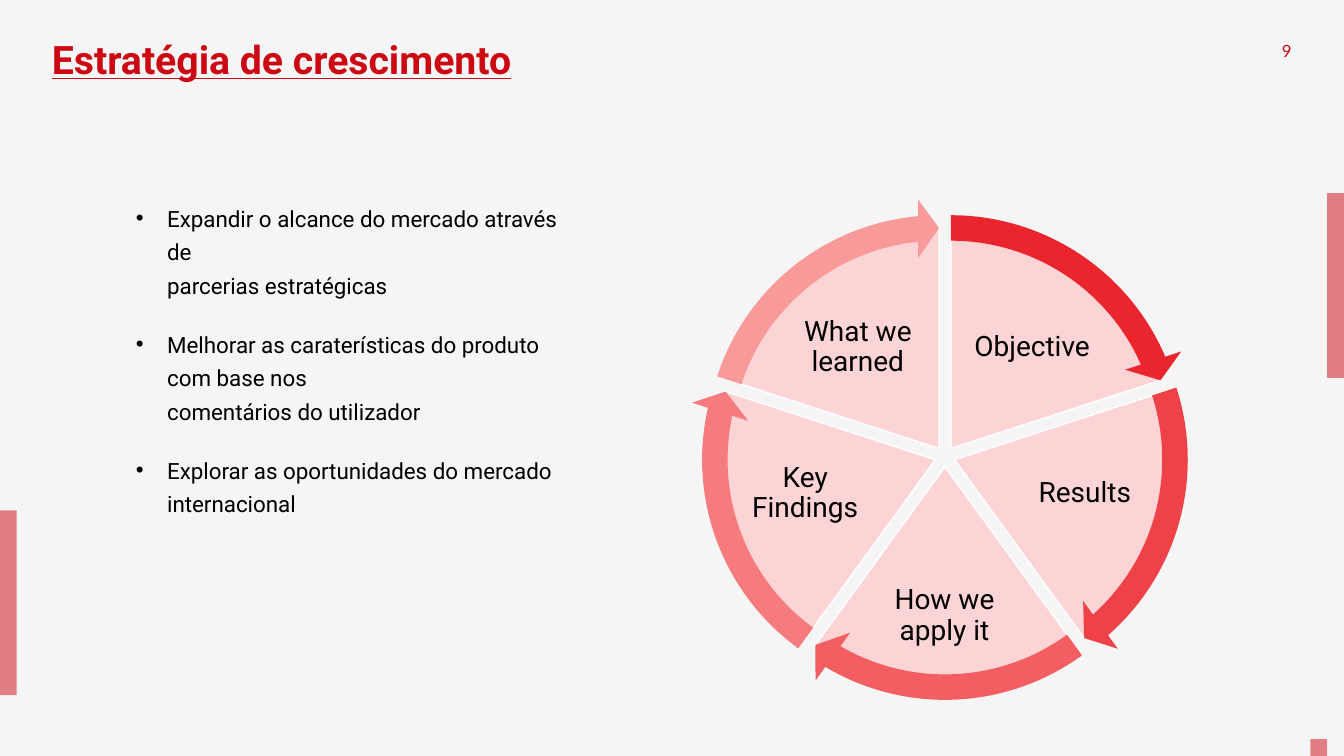
from math import cos, radians, sin

from lxml.etree import SubElement
from pptx import Presentation
from pptx.dml.color import RGBColor
from pptx.enum.shapes import MSO_SHAPE
from pptx.enum.text import MSO_ANCHOR, PP_ALIGN
from pptx.oxml.ns import qn
from pptx.util import Inches, Pt

RED = RGBColor(0xCC, 0x09, 0x12)
BLACK = RGBColor(0, 0, 0)
WHITE = RGBColor(0xFF, 0xFF, 0xFF)
PAPER = RGBColor(0xF5, 0xF5, 0xF5)
PINK = RGBColor(0xFD, 0xD4, 0xD6)

COLUMNS, ROWS = 160, 90
BARS = [(158, 23, 2, 22), (0, 60.75, 2, 22), (156, 88, 2, 2)]
BULLETS = [
    "Expandir o alcance do mercado através de \nparcerias estratégicas",
    "Melhorar as caraterísticas do produto com base nos \ncomentários do utilizador",
    "Explorar as oportunidades do mercado internacional",
]

# Cycle steps, clockwise from the top: label, label box, arrow colour
STEPS = [
    ("Objective", (114.35, 35.75, 17.05, 11.3), RGBColor(0xEA, 0x25, 0x2E)),
    ("Results", (121.3, 52.45, 15.7, 12.6), RGBColor(0xEE, 0x41, 0x48)),
    ("How we apply it", (104.9, 66.35, 15.1, 13.95), RGBColor(0xF2, 0x5E, 0x62)),
    ("Key Findings", (88, 52.45, 15.7, 12.6), RGBColor(0xF5, 0x7B, 0x7E)),
    ("What we learned", (93.6, 35.75, 17.05, 11.3), RGBColor(0xF8, 0x99, 0x9A)),
]
CENTRE = (112.5, 54.36)
PIE_SIZE, ARROW_SIZE, SPREAD = 52.92, 59.52, 1.2
STEP_ANGLE = 360 / len(STEPS)
ARROW_SWEEP = 66.54


def angle_adjustment(degrees):
    """Convert degrees to the adjustment unit, 100000 sixty-thousandths."""
    return degrees % 360 * 0.6


class SlideBuilder:
    """Draws on one slide; boxes are (column, row, columns, rows)."""

    def __init__(self, presentation):
        self.column = presentation.slide_width / COLUMNS
        self.row = presentation.slide_height / ROWS
        self.slide = presentation.slides.add_slide(presentation.slide_layouts[6])
        self.slide.background.fill.solid()
        self.slide.background.fill.fore_color.rgb = PAPER

    def place(self, box):
        left, top, width, height = box
        return (round(left * self.column), round(top * self.row),
                round(width * self.column), round(height * self.row))

    def shape(self, kind, box, color, line=None, adjustments=(), opacity=None):
        shape = self.slide.shapes.add_shape(kind, *self.place(box))
        shape.shadow.inherit = False
        for index, value in enumerate(adjustments):
            shape.adjustments[index] = value
        shape.fill.solid()
        shape.fill.fore_color.rgb = color
        if line is None:
            shape.line.fill.background()
        else:
            shape.line.color.rgb = line
            shape.line.width = Pt(1)
        if opacity is not None:
            color_element = shape.fill._xPr.find(".//" + qn("a:srgbClr"))
            SubElement(color_element, qn("a:alpha"), val=str(opacity * 1000))

    def text(self, box, lines, size, color=BLACK, font="Roboto", heading=False,
             align=PP_ALIGN.LEFT, anchor=MSO_ANCHOR.TOP, spacing=1.0, after=0,
             insets=(0.1, 0.05, 0.1, 0.05)):
        text_frame = self.slide.shapes.add_textbox(*self.place(box)).text_frame
        text_frame.word_wrap = True
        text_frame.vertical_anchor = anchor
        (text_frame.margin_left, text_frame.margin_top,
         text_frame.margin_right, text_frame.margin_bottom) = map(Inches, insets)
        for index, line in enumerate(lines):
            paragraph = text_frame.add_paragraph() if index else text_frame.paragraphs[0]
            paragraph.text = line
            paragraph.alignment = align
            paragraph.line_spacing = spacing
            paragraph.space_after = Pt(after)
            for run in paragraph.runs:
                run.font.name = font
                run.font.size = Pt(size)
                run.font.color.rgb = color
                run.font.bold = run.font.underline = heading
        return text_frame

    def bullets(self, box, lines):
        text_frame = self.text(box, lines, 16, spacing=1.25, after=18)
        for paragraph in text_frame.paragraphs:
            properties = paragraph._p.get_or_add_pPr()
            properties.set("marL", str(Inches(0.31)))
            properties.set("indent", str(-Inches(0.31)))
            SubElement(properties, qn("a:buFont"), typeface="Arial")
            SubElement(properties, qn("a:buChar"), char="•")

    def cycle(self):
        """Draw the slices and labels first, then the arrows over them."""
        arrows = []
        for index, (label, label_box, color) in enumerate(STEPS):
            start = 270 + index * STEP_ANGLE
            middle = radians(start + STEP_ANGLE / 2)
            centre_x = CENTRE[0] + SPREAD * cos(middle)
            centre_y = CENTRE[1] + SPREAD * sin(middle)
            pie_box, arrow_box = (
                (centre_x - size / 2, centre_y - size / 2, size, size)
                for size in (PIE_SIZE, ARROW_SIZE))
            begin = angle_adjustment(start)
            self.shape(MSO_SHAPE.PIE, pie_box, PINK, WHITE,
                       (begin, angle_adjustment(start + STEP_ANGLE)))
            self.text(label_box, [label], 20, align=PP_ALIGN.CENTER,
                      anchor=MSO_ANCHOR.MIDDLE, spacing=0.9, insets=(0, 0, 0, 0))
            tip = angle_adjustment(start + ARROW_SWEEP)
            arrows.append((arrow_box, color, (0.051, 3.275, tip, begin, 0.059)))
        for box, color, adjustments in arrows:
            self.shape(MSO_SHAPE.CIRCULAR_ARROW, box, color, adjustments=adjustments)


def main():
    presentation = Presentation()
    presentation.slide_width = Inches(40 / 3)
    presentation.slide_height = Inches(7.5)

    builder = SlideBuilder(presentation)
    for bar in BARS:
        builder.shape(MSO_SHAPE.RECTANGLE, bar, RED, opacity=50)
    builder.text((5, 4.25, 65.75, 14.65), ["Estratégia de crescimento"], 28, RED,
                 heading=True, spacing=0.9)
    builder.text((148.85, 4.25, 6.1, 4.75), ["9"], 12, RED, font="Lato",
                 align=PP_ALIGN.RIGHT, insets=(0.1, 0.05, 0.1, 0))
    builder.bullets((15, 23, 55.75, 58.75), BULLETS)
    builder.cycle()

    presentation.save("out.pptx")


if __name__ == "__main__":
    main()
